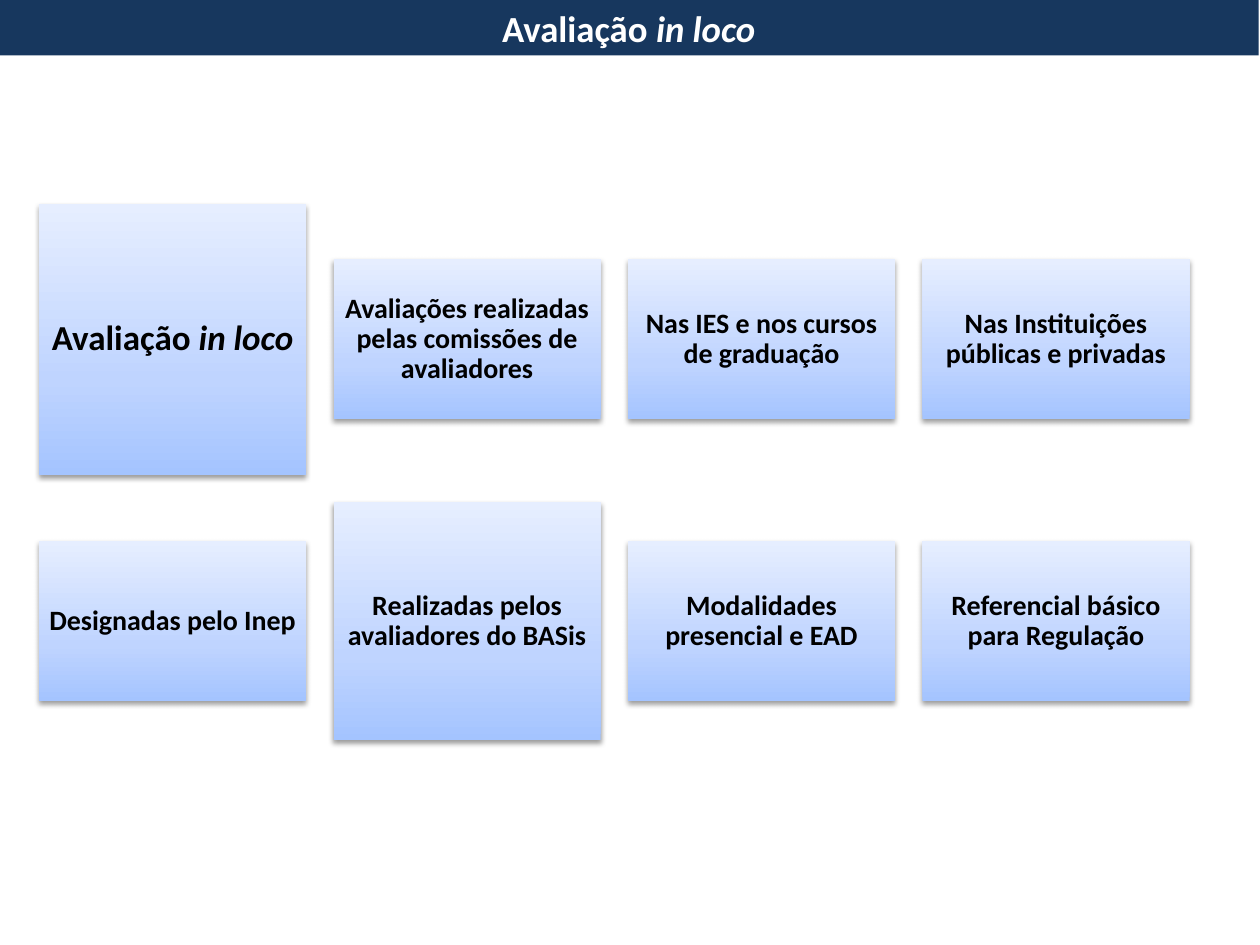
from lxml import etree
from pptx import Presentation
from pptx.dml.color import RGBColor
from pptx.enum.shapes import MSO_SHAPE
from pptx.enum.text import MSO_ANCHOR, MSO_AUTO_SIZE, PP_ALIGN
from pptx.oxml import parse_xml
from pptx.oxml.ns import qn
from pptx.util import Inches, Pt

COLORS = {
    "bar": "17375E",
    "white": "FFFFFF",
    "black": "000000",
    "deep": "A4C4FF",
    "mid": "BFD4FF",
    "pale": "E6EEFF",
}
NS = "http://schemas.openxmlformats.org/drawingml/2006/main"
STOPS = [(0, "deep"), (35, "mid"), (100, "pale")]


def write_text(s, text, italic="", size=16, color="black", inset=0.07, spacing=0.9, after=0):
    tf = s.text_frame
    tf.word_wrap = True
    tf.auto_size = MSO_AUTO_SIZE.NONE
    tf.vertical_anchor = MSO_ANCHOR.MIDDLE
    tf.margin_left = tf.margin_right = tf.margin_top = tf.margin_bottom = Inches(inset)
    p = tf.paragraphs[0]
    p.alignment = PP_ALIGN.CENTER
    p.line_spacing = spacing
    p.space_after = Pt(after)
    for part, slanted in ((text, False), (italic, True)):
        if part:
            r = p.add_run()
            r.text = part
            r.font.name = "Calibri"
            r.font.size = Pt(size)
            r.font.bold = True
            r.font.italic = slanted
            r.font.color.rgb = RGBColor.from_string(COLORS[color])


def style_card(s):
    s.line.fill.background()
    s.fill.gradient()
    s.fill.gradient_angle = 90
    stops = s._element.spPr.find(qn("a:gradFill")).find(qn("a:gsLst"))
    for gs in list(stops):
        stops.remove(gs)
    for pos, name in STOPS:
        gs = etree.SubElement(stops, qn("a:gs"), pos=str(pos * 1000))
        etree.SubElement(gs, qn("a:srgbClr"), val=COLORS[name])
    s.shadow.inherit = False
    s._element.spPr.find(qn("a:effectLst")).append(parse_xml(
        f'<a:outerShdw xmlns:a="{NS}" blurRad="40000" dist="20000" dir="5400000" '
        f'rotWithShape="0"><a:srgbClr val="{COLORS["black"]}">'
        '<a:alpha val="38000"/></a:srgbClr></a:outerShdw>'))


prs = Presentation()
prs.slide_width, prs.slide_height = Inches(10), Inches(7.5)
slide = prs.slides.add_slide(prs.slide_layouts[5])

title = slide.shapes.title
title.left, title.top = Inches(-0.01), Inches(0)
title.width, title.height = Inches(10), Inches(0.44)
title.fill.solid()
title.fill.fore_color.rgb = RGBColor.from_string(COLORS["bar"])
write_text(title, "Avaliação ", italic="in loco", size=21, color="white", inset=0.04, spacing=1.0)

LEFT, PITCH, WIDTH, HEIGHT = 0.31, 2.337, 2.12, 1.27
ROWS = [
    (2.695, [
        ("Avaliação ", 2.15, {"italic": "in loco", "size": 20, "inset": 0.08}),
        ("Avaliações realizadas pelas comissões de avaliadores", HEIGHT, {}),
        ("Nas IES e nos cursos de graduação", HEIGHT, {}),
        ("Nas Instituições públicas e privadas", HEIGHT, {}),
    ]),
    (4.93, [
        ("Designadas pelo Inep", HEIGHT, {}),
        ("Realizadas pelos avaliadores do BASis", 1.89, {}),
        ("Modalidades presencial e EAD", HEIGHT, {}),
        ("Referencial básico para Regulação", HEIGHT, {}),
    ]),
]

for middle, cards in ROWS:
    for col, (text, height, fmt) in enumerate(cards):
        s = slide.shapes.add_shape(
            MSO_SHAPE.RECTANGLE, Inches(LEFT + col * PITCH), Inches(middle - height / 2),
            Inches(WIDTH), Inches(height))
        style_card(s)
        write_text(s, text, **fmt)

prs.save("out.pptx")
